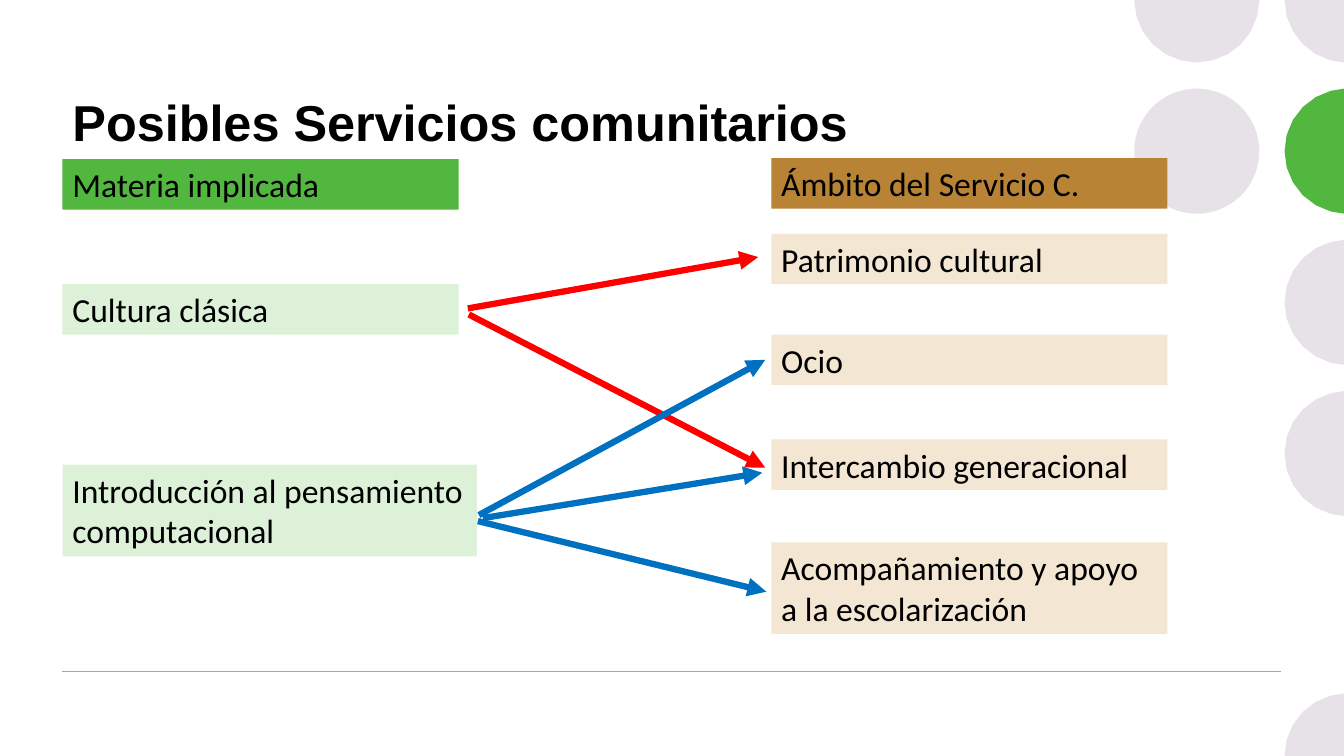
import math

import pptx
import pptx.util
from lxml import etree
from pptx.dml.color import RGBColor
from pptx.enum.shapes import MSO_CONNECTOR, MSO_SHAPE
from pptx.enum.text import MSO_ANCHOR
from pptx.oxml.ns import qn

WIDTH, HEIGHT = 13.33, 7.5
BLACK = RGBColor(0x00, 0x00, 0x00)
LILAC = RGBColor(0xE7, 0xE2, 0xE8)
GREEN = RGBColor(0x51, 0xB7, 0x3F)
PALE_GREEN = RGBColor(0xDC, 0xF1, 0xD8)
BROWN = RGBColor(0xB8, 0x83, 0x34)
PALE_BROWN = RGBColor(0xF3, 0xE7, 0xD4)
GREY = RGBColor(0xA6, 0xA6, 0xA6)
RED = RGBColor(0xFF, 0x00, 0x00)
BLUE = RGBColor(0x00, 0x70, 0xC0)

LEFT = 0.62
COLUMN_WIDTH = 3.93
ONE_LINE, TWO_LINES = 0.5, 0.91
PITCH, RADIUS = 1.5, 0.62
ARC_STEP = 15


def inches(*lengths):
    return [pptx.util.Inches(length) for length in lengths]


def paint(shape, color):
    shape.shadow.inherit = False
    shape.fill.solid()
    shape.fill.fore_color.rgb = color
    shape.line.fill.background()


def add_text(page, text, box, *, size=24, font="Calibri", bold=False,
             fill=None, anchor=MSO_ANCHOR.TOP):
    shape = page.shapes.add_textbox(*inches(*box))
    if fill is not None:
        paint(shape, fill)
    frame = shape.text_frame
    frame.word_wrap = True
    frame.vertical_anchor = anchor
    span = frame.paragraphs[0].add_run()
    span.text = text
    span.font.size = pptx.util.Pt(size)
    span.font.name = font
    span.font.bold = bold
    span.font.color.rgb = BLACK


def add_line(page, start, end, color, weight, arrow=False):
    line = page.shapes.add_connector(MSO_CONNECTOR.STRAIGHT, *inches(*start, *end))
    line.line.color.rgb = color
    line.line.width = pptx.util.Pt(weight)
    if arrow:
        etree.SubElement(line.line._get_or_add_ln(), qn("a:tailEnd"), type="triangle")
    etree.SubElement(line._element.spPr, qn("a:effectLst"))


def add_cut_disc(page, x, y, start, stop, color, corners=()):
    """Draw the arc from start to stop degrees, closed along the slide's edge."""
    angles = [math.radians(degree) for degree in range(start, stop + 1, ARC_STEP)]
    arc = [(min(x + RADIUS * math.cos(angle), WIDTH), y + RADIUS * math.sin(angle))
           for angle in angles]
    outline = [inches(*point) for point in [*arc, *corners]]
    builder = page.shapes.build_freeform(*outline[0])
    builder.add_line_segments(outline[1:], close=True)
    paint(builder.convert_to_shape(), color)


def add_backdrop(page):
    inner, outer = 11.87, 13.36
    disc = page.shapes.add_shape(MSO_SHAPE.OVAL, *inches(
        inner - RADIUS, PITCH - RADIUS, 2 * RADIUS, 2 * RADIUS))
    paint(disc, LILAC)
    add_cut_disc(page, inner, 0, 0, 180, LILAC)
    add_cut_disc(page, outer, HEIGHT, 180, 270, LILAC, [(WIDTH, HEIGHT)])
    for row, color in [(3, LILAC), (2, LILAC), (1, GREEN)]:
        add_cut_disc(page, outer, row * PITCH, 90, 270, color)
    add_cut_disc(page, outer, 0, 90, 180, LILAC, [(WIDTH, 0)])
    add_line(page, (LEFT, 6.66), (12.71, 6.66), GREY, 1)


def add_column(page, left, top, heading, heading_fill, entries, entry_fill):
    """Stack a heading and entries; each entry is text, offset, width, height."""
    add_text(page, heading, (left, top, COLUMN_WIDTH, ONE_LINE), fill=heading_fill)
    for text, offset, width, height in entries:
        add_text(page, text, (left, top + offset, width, height), fill=entry_fill)


def add_arrows(page):
    links = [
        (RED, (4.64, 3.06), (7.52, 2.55)),
        (RED, (4.65, 3.12), (7.59, 4.64)),
        (BLUE, (4.75, 5.11), (7.59, 3.57)),
        (BLUE, (4.79, 5.14), (7.56, 4.69)),
        (BLUE, (4.74, 5.17), (7.6, 5.87)),
    ]
    for color, start, end in links:
        add_line(page, start, end, color, 4.5, arrow=True)


def main():
    deck = pptx.Presentation()
    deck.slide_width, deck.slide_height = inches(WIDTH, HEIGHT)
    page = deck.slides.add_slide(deck.slide_layouts[6])
    add_backdrop(page)
    add_text(page, "Posibles Servicios comunitarios", (LEFT, 0.84, 8.02, 0.73),
             size=36, font="Arial", bold=True, anchor=MSO_ANCHOR.MIDDLE)
    add_column(page, LEFT, 1.58, "Materia implicada", GREEN, [
        ("Cultura clásica", 1.24, COLUMN_WIDTH, ONE_LINE),
        ("Introducción al pensamiento computacional", 3.03, 4.11, TWO_LINES),
    ], PALE_GREEN)
    add_column(page, 7.65, 1.57, "Ámbito del Servicio C.", BROWN, [
        ("Patrimonio cultural", 0.75, COLUMN_WIDTH, ONE_LINE),
        ("Ocio", 1.75, COLUMN_WIDTH, ONE_LINE),
        ("Intercambio generacional", 2.79, COLUMN_WIDTH, ONE_LINE),
        ("Acompañamiento y apoyo a la escolarización", 3.81, COLUMN_WIDTH, TWO_LINES),
    ], PALE_BROWN)
    add_arrows(page)
    deck.save("out.pptx")


if __name__ == "__main__":
    main()
